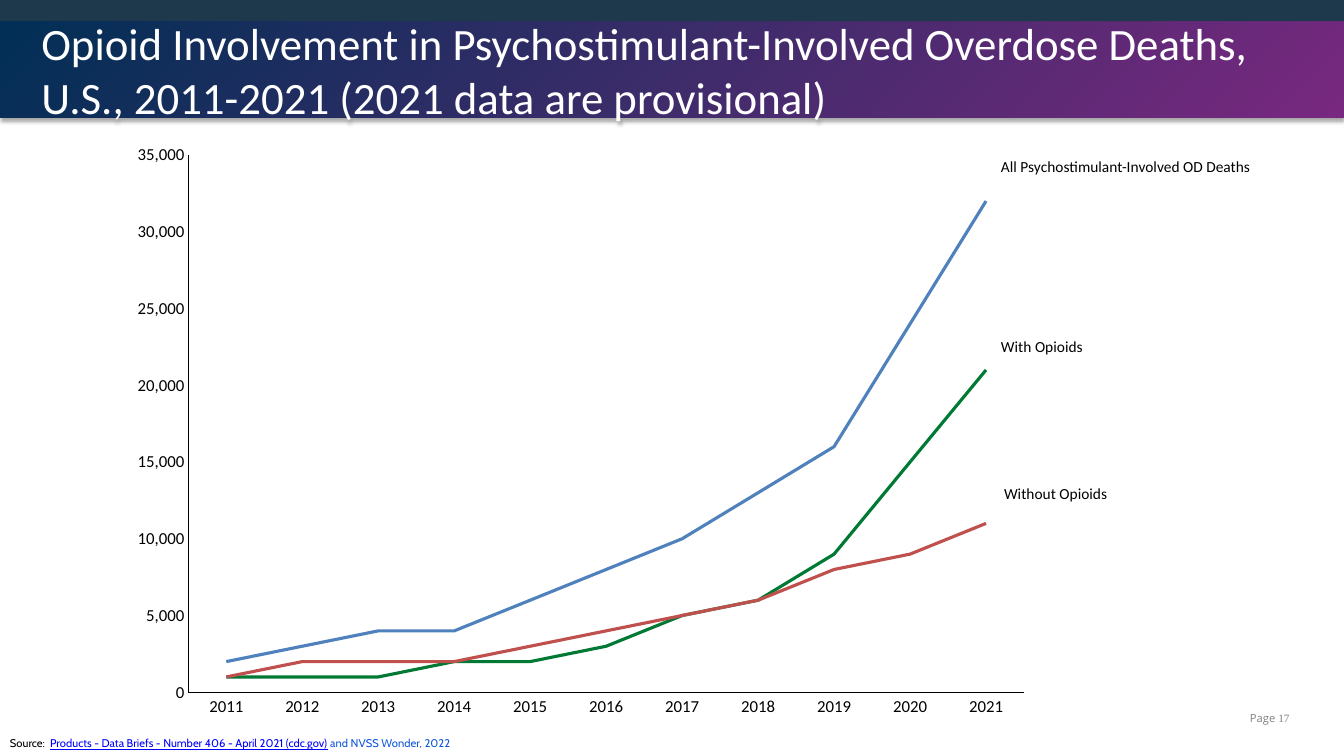
"""Build the slide on opioid involvement in psychostimulant overdose deaths."""
from dataclasses import dataclass

from lxml import etree
from pptx import Presentation
from pptx import util as u
from pptx.chart import data as cd
from pptx.dml.color import RGBColor
from pptx.enum import chart as ec
from pptx.enum import shapes, text
from pptx.oxml import ns

BLACK = RGBColor(0x00, 0x00, 0x00)
WHITE = RGBColor(0xFF, 0xFF, 0xFF)
SLATE = RGBColor(0x1E, 0x38, 0x4C)
NAVY = RGBColor(0x01, 0x2F, 0x55)
PURPLE = RGBColor(0x78, 0x28, 0x7F)
GREY = RGBColor(0x80, 0x80, 0x80)
LINK = RGBColor(0x00, 0x00, 0xFF)
COBALT = RGBColor(0x0F, 0x56, 0xDC)
BLUE = RGBColor(0x4F, 0x81, 0xBD)
GREEN = RGBColor(0x00, 0x79, 0x34)
RED = RGBColor(0xC0, 0x50, 0x4D)

WIDTH = 13.33
YEARS = [str(year) for year in range(2011, 2022)]


@dataclass
class Trend:
    name: str
    color: RGBColor
    left: float
    top: float
    wide: float
    deaths: tuple[int, ...]


@dataclass
class Piece:
    words: str
    font: str = "Calibri"
    color: RGBColor = BLACK
    under: bool = False


TRENDS = [
    Trend("All Psychostimulant-Involved OD Deaths", BLUE, 9.83, 1.51, 2.87,
          (2000, 3000, 4000, 4000, 6000, 8000, 10000, 13000, 16000, 24000, 32000)),
    Trend("With Opioids", GREEN, 9.83, 3.3, 1.3,
          (1000, 1000, 1000, 2000, 2000, 3000, 5000, 6000, 9000, 15000, 21000)),
    Trend("Without Opioids", RED, 9.86, 4.75, 1.57,
          (1000, 2000, 2000, 2000, 3000, 4000, 5000, 6000, 8000, 9000, 11000)),
]


def place(shape, left: float, top: float, wide: float, high: float) -> None:
    shape.left, shape.top = u.Inches(left), u.Inches(top)
    shape.width, shape.height = u.Inches(wide), u.Inches(high)


def add_text(slide, box: tuple[float, ...], size: float, pieces: list[Piece]):
    frame = slide.shapes.add_textbox(*map(u.Inches, box)).text_frame
    frame.word_wrap = True
    para = frame.paragraphs[0]
    para.font.size = u.Pt(size)
    for piece in pieces:
        run = para.add_run()
        run.text = piece.words
        run.font.name = piece.font
        run.font.color.rgb = piece.color
        if piece.under:
            run.font.underline = True
    return frame


def add_title(slide) -> None:
    title = slide.shapes.title
    place(title, 0, 0.21, WIDTH, 0.96)
    title.fill.gradient()
    title.fill.gradient_angle = 315
    for stop, color, spot in zip(title.fill.gradient_stops, (NAVY, PURPLE), (0, 1)):
        stop.color.rgb = color
        stop.position = spot
    title.line.fill.background()
    title.shadow.inherit = False
    glow = title.element.spPr.find(ns.qn("a:effectLst"))
    shade = etree.SubElement(glow, ns.qn("a:outerShdw"), blurRad=str(u.Pt(3.1)),
                             dist=str(u.Pt(1.8)), dir="5400000", rotWithShape="0")
    tint = etree.SubElement(shade, ns.qn("a:srgbClr"), val="000000")
    etree.SubElement(tint, ns.qn("a:alpha"), val="35000")

    frame = title.text_frame
    frame.text = ("Opioid Involvement in Psychostimulant-Involved Overdose Deaths,\n"
                  "U.S., 2011-2021 (2021 data are provisional)")
    frame.auto_size = text.MSO_AUTO_SIZE.NONE
    frame.vertical_anchor = text.MSO_ANCHOR.MIDDLE
    frame.margin_left = u.Inches(0.41)
    for para in frame.paragraphs:
        para.alignment = text.PP_ALIGN.LEFT
        para.font.name = "Calibri"
        para.font.size = u.Pt(32)
        para.font.color.rgb = WHITE


def add_bar(slide) -> None:
    bar = slide.shapes.add_shape(shapes.MSO_SHAPE.RECTANGLE, 0, 0,
                                 u.Inches(WIDTH), u.Inches(0.21))
    bar.shadow.inherit = False
    bar.fill.solid()
    bar.fill.fore_color.rgb = SLATE
    bar.line.fill.background()


def set_plot(chart) -> None:
    area = chart.element.find(".//" + ns.qn("c:plotArea"))
    for old in area.findall(ns.qn("c:layout")):
        area.remove(old)
    layout = etree.Element(ns.qn("c:layout"))
    manual = etree.SubElement(layout, ns.qn("c:manualLayout"))
    for key, val in (("layoutTarget", "inner"), ("xMode", "edge"), ("yMode", "edge"),
                     ("x", "0.075"), ("y", "0.037"), ("w", "0.904"), ("h", "0.902")):
        etree.SubElement(manual, ns.qn("c:" + key), val=val)
    area.insert(0, layout)


def add_graph(slide) -> None:
    data = cd.CategoryChartData(number_format="#,##0")
    data.categories = YEARS
    for trend in TRENDS:
        data.add_series(trend.name, trend.deaths)
    box = map(u.Inches, (1.18, 1.32, 9.17, 5.91))
    chart = slide.shapes.add_chart(ec.XL_CHART_TYPE.LINE, *box, data).chart
    chart.has_legend = False
    chart.has_title = False
    chart.font.name = "Calibri"
    chart.font.size = u.Pt(12)
    chart.font.color.rgb = BLACK
    chart.plots[0].vary_by_categories = False
    for line, trend in zip(chart.plots[0].series, TRENDS):
        line.smooth = False
        line.marker.style = ec.XL_MARKER_STYLE.NONE
        line.format.line.color.rgb = trend.color
        line.format.line.width = u.Pt(2.25)
    for axis in (chart.category_axis, chart.value_axis):
        axis.has_major_gridlines = False
        axis.major_tick_mark = ec.XL_TICK_MARK.NONE
        axis.minor_tick_mark = ec.XL_TICK_MARK.NONE
        axis.format.line.color.rgb = BLACK
        axis.format.line.width = u.Pt(0.75)
    scale = chart.value_axis
    scale.minimum_scale, scale.maximum_scale = 0, 35000
    scale.major_unit = 5000
    scale.tick_labels.number_format = "#,##0"
    scale.tick_labels.number_format_is_linked = False
    set_plot(chart)


def add_page(slide) -> None:
    frame = add_text(slide, (10.94, 7.03, 1.85, 0.25), 8,
                     [Piece("Page ", "Open Sans", GREY),
                      Piece("17", "Times New Roman", GREY)])
    frame.margin_left = frame.margin_right = 0
    frame.margin_top = frame.margin_bottom = 0
    para = frame.paragraphs[0]
    para.alignment = text.PP_ALIGN.RIGHT
    para.line_spacing = 1.2


def main() -> None:
    deck = Presentation()
    deck.slide_width, deck.slide_height = u.Inches(WIDTH), u.Inches(7.5)
    slide = deck.slides.add_slide(deck.slide_layouts[5])
    add_title(slide)
    add_bar(slide)
    add_page(slide)
    add_text(slide, (0, 7.26, 7.44, 0.24), 8, [
        Piece("Source:  ", "Cabin"),
        Piece("Products - Data Briefs - Number 406 - April 2021 (cdc.gov)",
              "Cabin", LINK, True),
        Piece(" and NVSS Wonder, 2022", "Cabin", COBALT)])
    add_graph(slide)
    for trend in TRENDS:
        add_text(slide, (trend.left, trend.top, trend.wide, 0.36), 11,
                 [Piece(trend.name)])
    deck.save("out.pptx")


if __name__ == "__main__":
    main()
